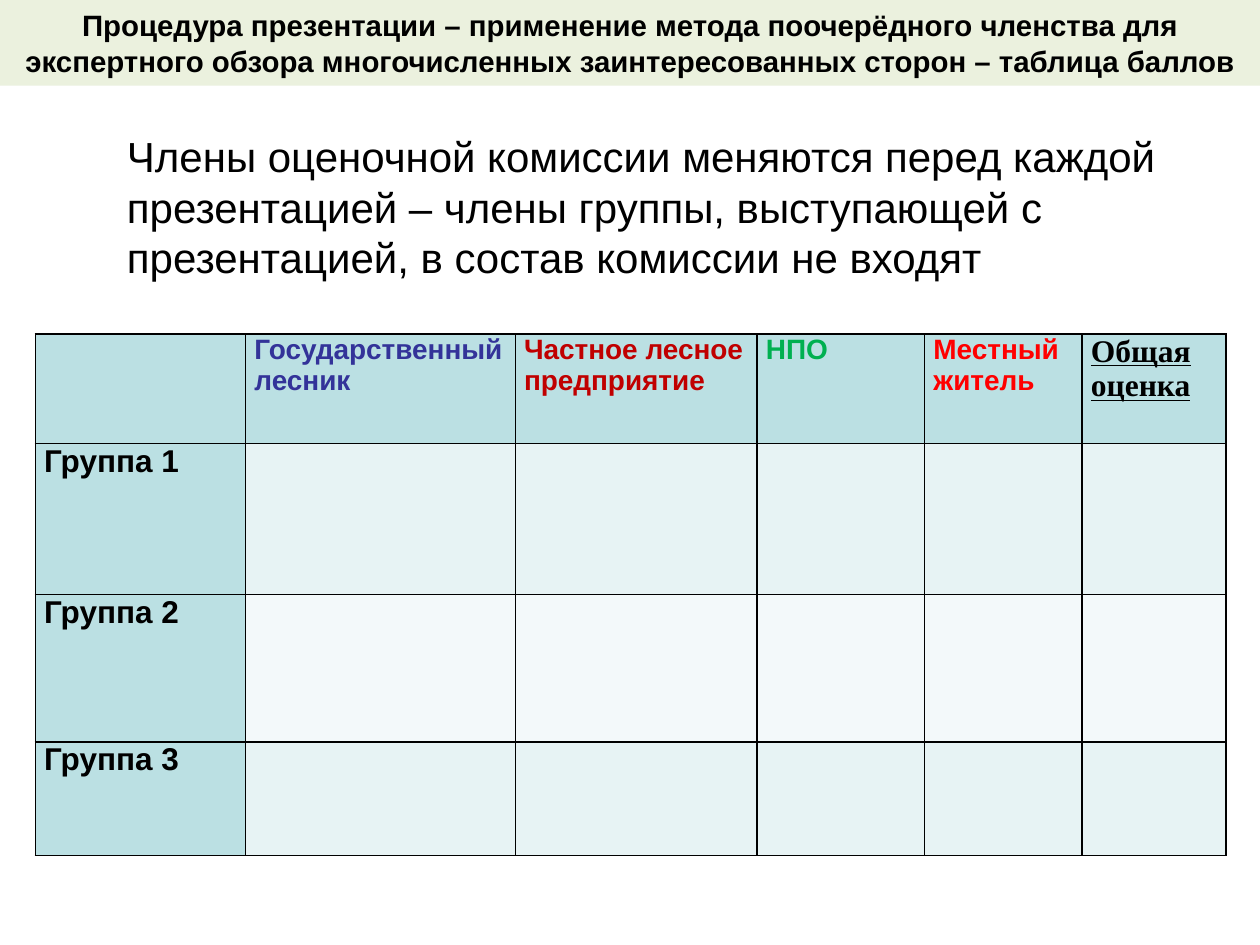
from lxml.etree import SubElement
from pptx import Presentation
from pptx.dml.color import RGBColor
from pptx.enum.shapes import MSO_SHAPE
from pptx.enum.text import MSO_ANCHOR, PP_ALIGN
from pptx.oxml.ns import qn
from pptx.util import Inches, Pt

TITLE = ("Процедура презентации – применение метода поочерёдного членства для "
         "экспертного обзора многочисленных заинтересованных сторон – таблица баллов")
RULE = ("Члены оценочной комиссии меняются перед каждой презентацией – члены группы, "
        "выступающей с презентацией, в состав комиссии не входят")

# Column heading, width in inches, style name
COLUMNS = [
    ("", 1.67, "group"),
    ("Государственный лесник", 2.14, "state"),
    ("Частное лесное предприятие", 1.92, "private"),
    ("НПО", 1.33, "ngo"),
    ("Местный житель", 1.25, "local"),
    ("Общая оценка", 1.14, "total"),
]
HEADER_HEIGHT = 0.87
GROUPS = [("Группа 1", 1.2), ("Группа 2", 1.17), ("Группа 3", 0.9)]

THEME = {
    "title_fill": "EBF1DE",
    "header_fill": "BBE0E3",
    "band_fills": ["E7F3F4", "F3F9FA"],
    "border": "000000",
    # font, size, colour, bold, underline
    "title": ("Arial", 16.8, "000000", True, False),
    "rule": ("Arial", 24, "000000", False, False),
    "state": ("Arial", 16, "333399", True, False),
    "private": ("Arial", 16, "C00000", True, False),
    "ngo": ("Arial", 16, "00B050", True, False),
    "local": ("Arial", 16, "FF0000", True, False),
    "total": ("Times New Roman", 18, "000000", True, True),
    "group": ("Arial", 18, "000000", True, False),
}


def add_run(paragraph, text, style):
    run = paragraph.add_run()
    run.text = text
    font = run.font
    font.name, size, color, font.bold, font.underline = THEME[style]
    font.size = Pt(size)
    font.color.rgb = RGBColor.from_string(color)


def add_title(slide, width):
    shape = slide.shapes.add_shape(MSO_SHAPE.RECTANGLE, 0, 0, width, Inches(0.68))
    shape.shadow.inherit = False
    shape.fill.solid()
    shape.fill.fore_color.rgb = RGBColor.from_string(THEME["title_fill"])
    shape.line.fill.background()
    frame = shape.text_frame
    frame.word_wrap = True
    frame.vertical_anchor = MSO_ANCHOR.MIDDLE
    frame.paragraphs[0].alignment = PP_ALIGN.CENTER
    add_run(frame.paragraphs[0], TITLE, "title")


def add_rule(slide):
    shape = slide.shapes.add_textbox(Inches(0.91), Inches(0.99), Inches(8.66), Inches(1.31))
    shape.text_frame.word_wrap = True
    add_run(shape.text_frame.paragraphs[0], RULE, "rule")


def add_borders(cell):
    """Put the four border lines ahead of the fill, as the schema requires."""
    properties = cell._tc.get_or_add_tcPr()
    for position, side in enumerate(("lnL", "lnR", "lnT", "lnB")):
        line = SubElement(properties, qn(f"a:{side}"), w=str(Pt(1)))
        fill = SubElement(line, qn("a:solidFill"))
        SubElement(fill, qn("a:srgbClr"), val=THEME["border"])
        properties.insert(position, line)


def format_cell(cell, text, style, fill):
    cell.fill.solid()
    cell.fill.fore_color.rgb = RGBColor.from_string(fill)
    add_borders(cell)
    if text:
        cell.margin_left = cell.margin_right = Inches(0.07)
        cell.margin_top = cell.margin_bottom = 0
        paragraph = cell.text_frame.paragraphs[0]
        paragraph.space_after = Pt(12)
        add_run(paragraph, text, style)


def add_score_table(slide):
    widths = [width for _, width, _ in COLUMNS]
    heights = [HEADER_HEIGHT] + [height for _, height in GROUPS]
    table = slide.shapes.add_table(
        len(heights), len(widths), Inches(0.28), Inches(2.65),
        Inches(sum(widths)), Inches(sum(heights))).table
    for row, height in zip(table.rows, heights):
        row.height = Inches(height)
    for index, (heading, width, style) in enumerate(COLUMNS):
        table.columns[index].width = Inches(width)
        format_cell(table.cell(0, index), heading, style, THEME["header_fill"])
    for row, (group, _) in enumerate(GROUPS, start=1):
        format_cell(table.cell(row, 0), group, "group", THEME["header_fill"])
        for column in range(1, len(COLUMNS)):
            format_cell(table.cell(row, column), "", "group", THEME["band_fills"][(row - 1) % 2])


def main():
    presentation = Presentation()
    presentation.slide_width = Inches(10)
    presentation.slide_height = Inches(7.5)
    slide = presentation.slides.add_slide(presentation.slide_layouts[6])
    add_score_table(slide)
    add_title(slide, presentation.slide_width)
    add_rule(slide)
    presentation.save("out.pptx")


if __name__ == "__main__":
    main()
